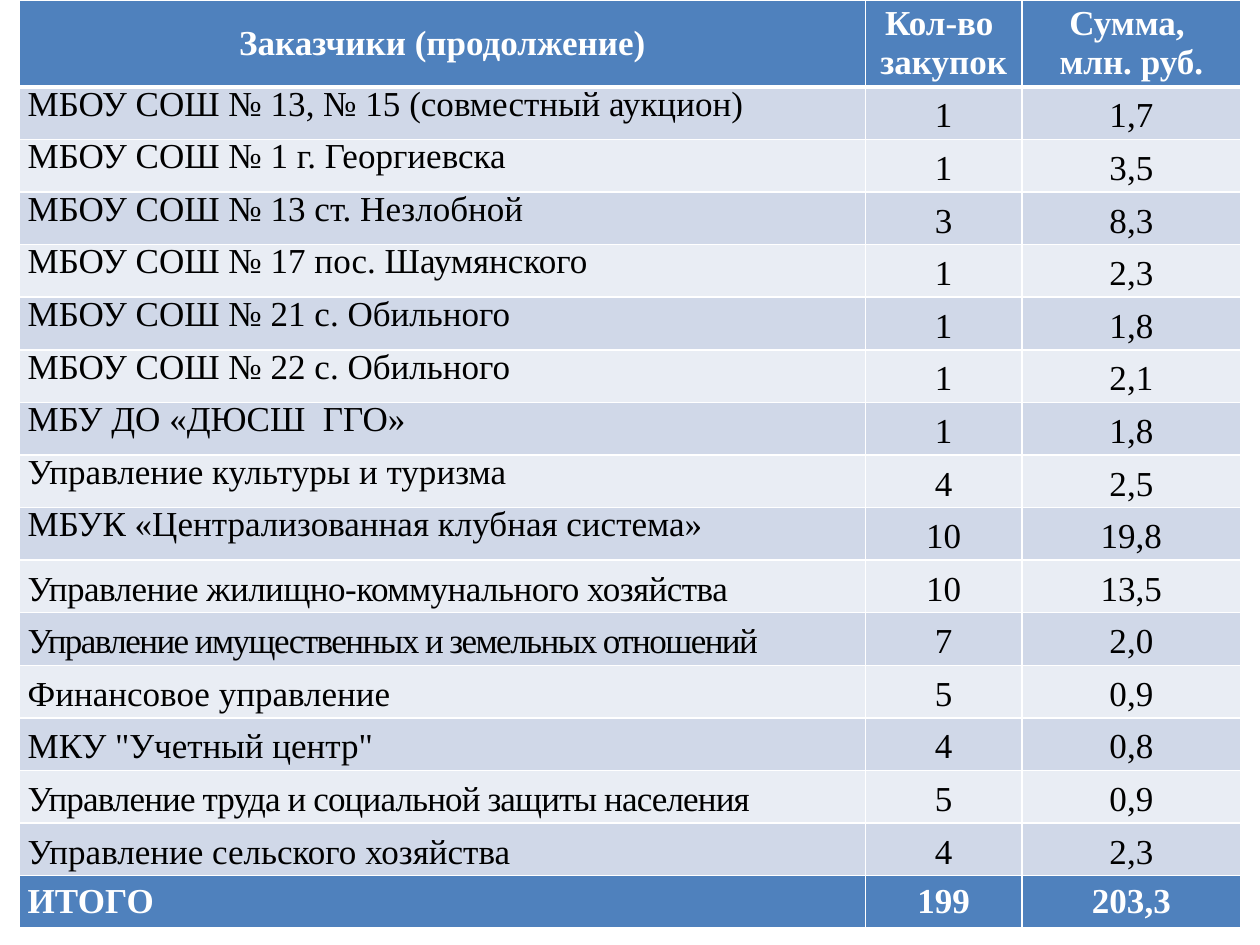
from typing import NamedTuple

from lxml import etree
from pptx import Presentation
from pptx.dml.color import RGBColor
from pptx.enum.text import MSO_ANCHOR, PP_ALIGN
from pptx.oxml.ns import qn
from pptx.util import Inches, Pt

LEFT, CENTER = PP_ALIGN.LEFT, PP_ALIGN.CENTER
MIDDLE = MSO_ANCHOR.MIDDLE

COLORS = {
    "accent": "4F81BD",
    "band_dark": "D0D8E8",
    "band_light": "E9EDF4",
    "white": "FFFFFF",
    "black": "000000",
}
FONT = "Times New Roman"
SLIDE_W, SLIDE_H = 10, 7.5
TABLE_LEFT, TABLE_W, TABLE_H = 0.15, 9.7, 7.37
COL_WIDTHS = (6.72, 1.24, 1.74)
HEADER_H = 0.69
TIGHT = Pt(12)
LOOSE = 1.15


class Customer(NamedTuple):
    name: str
    purchases: str
    amount: str
    leading: Pt | float = LOOSE
    tracking: float = 0


class CellStyle(NamedTuple):
    fill: str
    color: str
    bold: bool = False
    bottom_line: int = 1


HEADER = (("Заказчики (продолжение)",), ("Кол-во ", "закупок"), ("Сумма, ", "млн. руб."))
CUSTOMERS = (
    Customer("МБОУ СОШ № 13, № 15 (совместный аукцион)", "1", "1,7", TIGHT),
    Customer("МБОУ СОШ № 1 г. Георгиевска", "1", "3,5", TIGHT),
    Customer("МБОУ СОШ № 13 ст. Незлобной", "3", "8,3", TIGHT),
    Customer("МБОУ СОШ № 17 пос. Шаумянского", "1", "2,3", TIGHT),
    Customer("МБОУ СОШ № 21 с. Обильного", "1", "1,8", TIGHT),
    Customer("МБОУ СОШ № 22 с. Обильного", "1", "2,1", TIGHT),
    Customer("МБУ ДО «ДЮСШ  ГГО»", "1", "1,8", TIGHT),
    Customer("Управление культуры и туризма", "4", "2,5", TIGHT),
    Customer("МБУК «Централизованная клубная система»", "10", "19,8", TIGHT),
    Customer("Управление жилищно-коммунального хозяйства", "10", "13,5", tracking=-0.3),
    Customer("Управление имущественных и земельных отношений", "7", "2,0", tracking=-0.9),
    Customer("Финансовое управление", "5", "0,9"),
    Customer('МКУ "Учетный центр"', "4", "0,8"),
    Customer("Управление труда и социальной защиты населения", "5", "0,9", tracking=-0.5),
    Customer("Управление сельского хозяйства", "4", "2,3"),
)
TOTAL = Customer("ИТОГО", "199", "203,3", 1.0)

HEADER_STYLE = CellStyle("accent", "white", True, 3)
TOTAL_STYLE = CellStyle("accent", "white", True)
BAND_STYLES = (CellStyle("band_dark", "black"), CellStyle("band_light", "black"))


def rgb(name: str) -> RGBColor:
    return RGBColor.from_string(COLORS[name])


def add_border(cell, side: str, width: int) -> None:
    ln = etree.SubElement(cell._tc.get_or_add_tcPr(), qn(f"a:ln{side}"), w=str(Pt(width)))
    fill = etree.SubElement(ln, qn("a:solidFill"))
    etree.SubElement(fill, qn("a:srgbClr"), val=COLORS["white"])


def fill_cell(cell, lines: tuple[str, ...], style: CellStyle, align: PP_ALIGN,
              leading: Pt | float = 1.0, tracking: float = 0, top_line: int = 1) -> None:
    cell.vertical_anchor = MIDDLE
    cell.margin_left = cell.margin_right = Inches(0.07)
    cell.margin_top = cell.margin_bottom = 0
    for side, width in (("L", 1), ("R", 1), ("T", top_line), ("B", style.bottom_line)):
        add_border(cell, side, width)
    cell.fill.solid()
    cell.fill.fore_color.rgb = rgb(style.fill)

    tf = cell.text_frame
    for i, line in enumerate(lines):
        p = tf.add_paragraph() if i else tf.paragraphs[0]
        p.alignment = align
        p.line_spacing = leading
        r = p.add_run()
        r.text = line
        r.font.name = FONT
        r.font.size = Pt(20)
        r.font.bold = style.bold
        r.font.color.rgb = rgb(style.color)
        if tracking:
            r.font._element.set("spc", str(round(tracking * 100)))


def fill_customer_row(table, row: int, customer: Customer, style: CellStyle) -> None:
    top_line = HEADER_STYLE.bottom_line if row == 1 else 1
    fill_cell(table.cell(row, 0), (customer.name,), style, LEFT,
              customer.leading, customer.tracking, top_line)
    number_leading = 1.0 if customer is TOTAL else LOOSE
    for col, value in enumerate((customer.purchases, customer.amount), start=1):
        fill_cell(table.cell(row, col), (value,), style, CENTER,
                  number_leading, top_line=top_line)


def main() -> None:
    prs = Presentation()
    prs.slide_width, prs.slide_height = Inches(SLIDE_W), Inches(SLIDE_H)
    s = prs.slides.add_slide(prs.slide_layouts[6])

    body_rows = len(CUSTOMERS) + 1
    table = s.shapes.add_table(body_rows + 1, len(COL_WIDTHS), Inches(TABLE_LEFT), 0,
                               Inches(TABLE_W), Inches(TABLE_H)).table
    for column, width in zip(table.columns, COL_WIDTHS):
        column.width = Inches(width)
    for i, row in enumerate(table.rows):
        row.height = Inches((TABLE_H - HEADER_H) / body_rows if i else HEADER_H)

    for col, lines in enumerate(HEADER):
        fill_cell(table.cell(0, col), lines, HEADER_STYLE, CENTER)
    for i, customer in enumerate(CUSTOMERS):
        fill_customer_row(table, i + 1, customer, BAND_STYLES[i % 2])
    fill_customer_row(table, body_rows, TOTAL, TOTAL_STYLE)

    prs.save("out.pptx")


if __name__ == "__main__":
    main()
